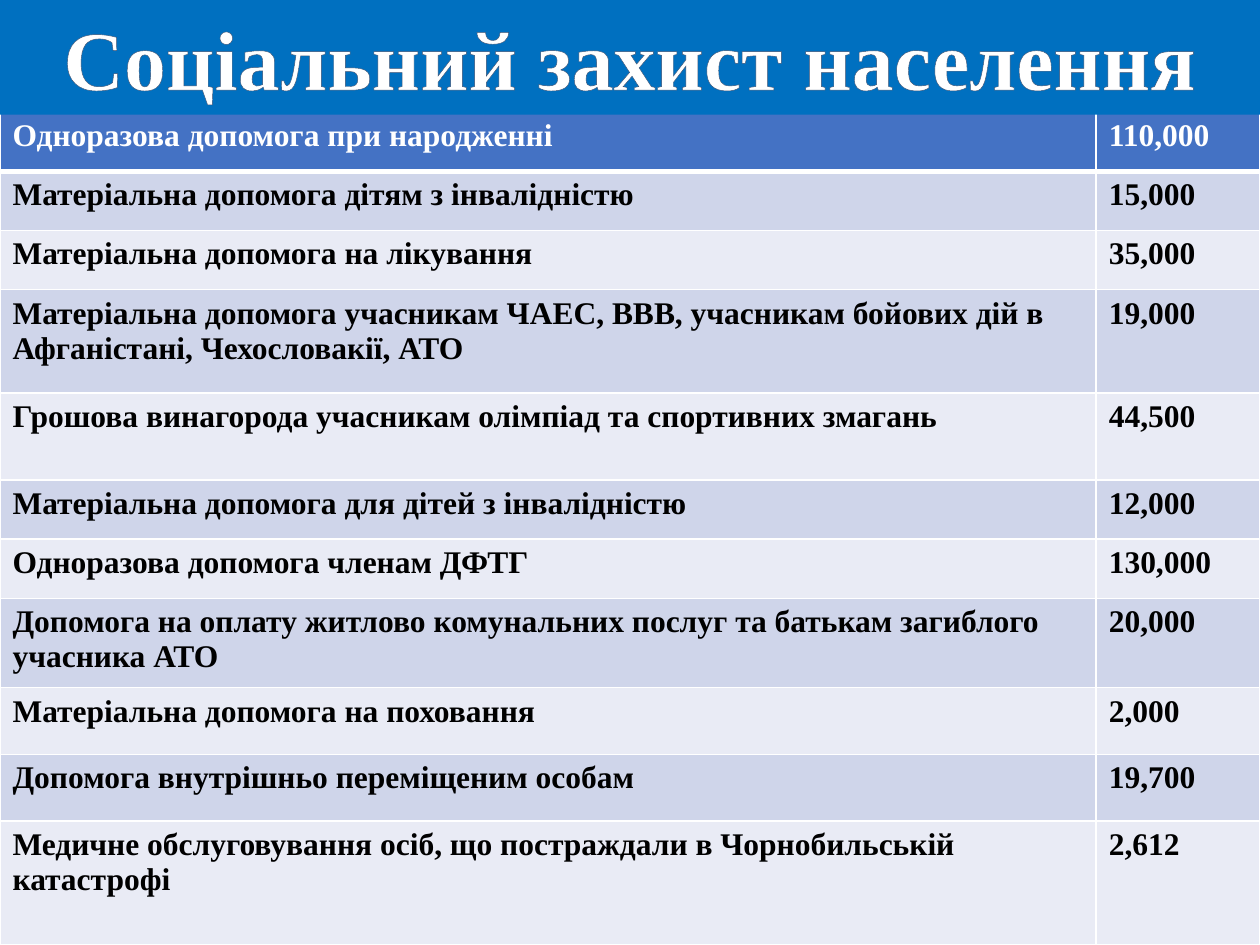
from dataclasses import dataclass

from lxml.etree import SubElement
from pptx import Presentation
from pptx.dml.color import RGBColor
from pptx.enum.shapes import MSO_SHAPE
from pptx.enum.text import MSO_ANCHOR, PP_ALIGN
from pptx.oxml.ns import qn
from pptx.util import Inches, Pt


@dataclass(frozen=True)
class Theme:
    font: str = "Times New Roman"
    title_size: int = 48
    table_size: int = 18
    title_fill: str = "0070C0"
    title_outline: str = "3A5274"
    header_fill: str = "4472C4"
    bands: tuple = ("CFD5EA", "E9EBF5")
    light: str = "FFFFFF"
    dark: str = "000000"


# Kind of aid, amount, row height in inches
AID = [
    ("Одноразова допомога при народженні", "110,000", 0.47),
    ("Матеріальна допомога дітям з інвалідністю", "15,000", 0.47),
    ("Матеріальна допомога на лікування", "35,000", 0.47),
    ("Матеріальна допомога учасникам ЧАЕС, ВВВ, учасникам бойових дій в "
     "Афганістані, Чехословакії, АТО", "19,000", 0.82),
    ("Грошова винагорода учасникам олімпіад та спортивних змагань", "44,500", 0.69),
    ("Матеріальна допомога для дітей з інвалідністю", "12,000", 0.47),
    ("Одноразова допомога членам ДФТГ", "130,000", 0.47),
    ("Допомога на оплату житлово комунальних послуг та батькам загиблого "
     "учасника АТО", "20,000", 0.71),
    ("Матеріальна допомога на поховання", "2,000", 0.53),
    ("Допомога внутрішньо переміщеним особам", "19,700", 0.53),
    ("Медичне обслуговування осіб, що постраждали в Чорнобильській "
     "катастрофі", "2,612", 0.98),
]


def add_line(parent, tag, color, width):
    line = SubElement(parent, qn(tag), w=str(Pt(width)))
    fill = SubElement(line, qn("a:solidFill"))
    SubElement(fill, qn("a:srgbClr"), val=color)
    return line


class SlideBuilder:
    def __init__(self, presentation, theme):
        self.theme = theme
        self.width = presentation.slide_width
        self.slide = presentation.slides.add_slide(presentation.slide_layouts[6])

    def style(self, paragraph, size, color):
        font = paragraph.font
        font.name, font.size, font.bold = self.theme.font, Pt(size), True
        font.color.rgb = RGBColor.from_string(color)

    def title(self, text, height):
        theme = self.theme
        shape = self.slide.shapes.add_shape(
            MSO_SHAPE.RECTANGLE, 0, 0, self.width, Inches(height))
        shape.shadow.inherit = False
        shape.fill.solid()
        shape.fill.fore_color.rgb = RGBColor.from_string(theme.title_fill)
        shape.line.fill.background()
        shape.text_frame.word_wrap = True
        shape.text_frame.vertical_anchor = MSO_ANCHOR.TOP
        paragraph = shape.text_frame.paragraphs[0]
        paragraph.alignment = PP_ALIGN.CENTER
        run = paragraph.add_run()
        run.text = text
        self.style(paragraph, theme.title_size, theme.light)
        add_line(run.font._element, "a:ln", theme.title_outline, 1)

    def cell(self, cell, text, fill, color, bottom_width):
        cell.text = text
        self.style(cell.text_frame.paragraphs[0], self.theme.table_size, color)
        properties = cell._tc.get_or_add_tcPr()
        for side, width in (("L", 1), ("R", 1), ("T", 1), ("B", bottom_width)):
            add_line(properties, f"a:ln{side}", self.theme.light, width)
        cell.fill.solid()
        cell.fill.fore_color.rgb = RGBColor.from_string(fill)

    def table(self, rows, top, shares):
        theme = self.theme
        height = Inches(sum(row[-1] for row in rows))
        table = self.slide.shapes.add_table(
            len(rows), len(shares), 0, Inches(top), self.width, height).table
        for column, share in zip(table.columns, shares):
            column.width = int(self.width * share)
        for index, (*texts, row_height) in enumerate(rows):
            table.rows[index].height = Inches(row_height)
            if index == 0:
                look = theme.header_fill, theme.light, 3
            else:
                look = theme.bands[(index - 1) % 2], theme.dark, 1
            for column, text in enumerate(texts):
                self.cell(table.cell(index, column), text, *look)


def main():
    presentation = Presentation()
    presentation.slide_width, presentation.slide_height = Inches(10), Inches(7.5)
    builder = SlideBuilder(presentation, Theme())

    # Amounts of aid, with the title band overlapping the table's top edge
    builder.table(AID, top=0.89, shares=(0.87, 0.13))
    builder.title("Соціальний захист населення", height=0.91)

    presentation.save("out.pptx")


if __name__ == "__main__":
    main()
